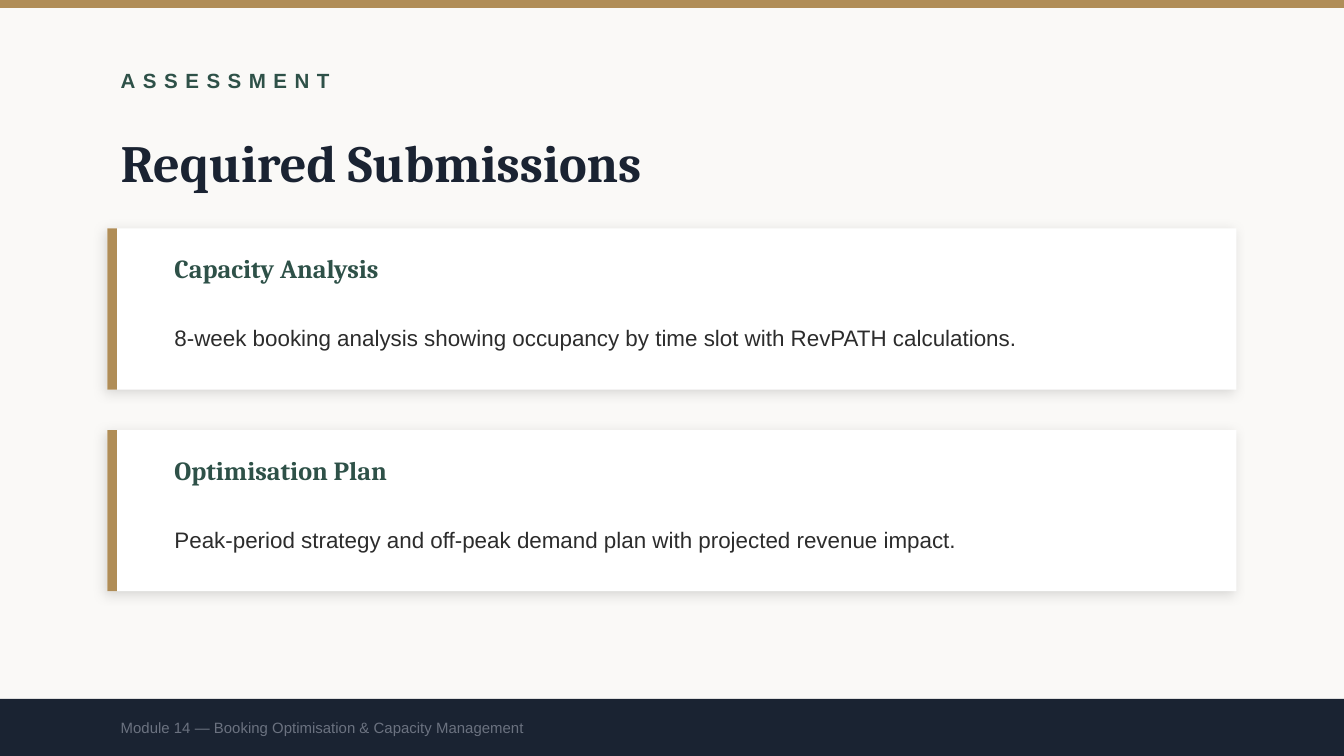
from lxml import etree
from pptx import Presentation
from pptx.dml.color import RGBColor
from pptx.enum.shapes import MSO_SHAPE
from pptx.enum.text import MSO_ANCHOR
from pptx.oxml.ns import qn
from pptx.util import Inches, Pt

RECTANGLE = MSO_SHAPE.RECTANGLE
MIDDLE = MSO_ANCHOR.MIDDLE

GRID = Inches(0.1)
COLUMNS, ROWS = 100, 56.25
MARGIN = 8
TEXT_WIDTH = 80
CARD_TOP, CARD_WIDTH, CARD_HEIGHT, CARD_STEP = 17, 84, 12, 15

GOLD, GREEN, NAVY = "B08D57", "2E5148", "1A2332"
PAPER, WHITE, BLACK = "FAF9F7", "FFFFFF", "000000"
INK, GRAY = "2C2C2C", "6B7280"
HEADING_FONT, BODY_FONT = "Cambria", "Arial"

CARDS = [
    ("Capacity Analysis",
     "8-week booking analysis showing occupancy by time slot with RevPATH calculations."),
    ("Optimisation Plan",
     "Peak-period strategy and off-peak demand plan with projected revenue impact."),
]


def color(value):
    return RGBColor.from_string(value)


def on_grid(box):
    return [round(length * GRID) for length in box]


def add_rectangle(slide, box, fill):
    shape = slide.shapes.add_shape(RECTANGLE, *on_grid(box))
    shape.fill.solid()
    shape.fill.fore_color.rgb = color(fill)
    shape.line.fill.background()
    shape.shadow.inherit = False
    return shape


def add_soft_shadow(shape):
    effects = shape._element.spPr.find(qn("a:effectLst"))
    shadow = etree.SubElement(
        effects, qn("a:outerShdw"), blurRad=str(Pt(6)), dist=str(Pt(2)),
        dir=str(135 * 60000), algn="bl", rotWithShape="0")
    tint = etree.SubElement(shadow, qn("a:srgbClr"), val=BLACK)
    etree.SubElement(tint, qn("a:alpha"), val="12000")


def add_text(slide, box, text, font_name, size, fill, bold=False, tracking=0, line_spacing=None):
    text_frame = slide.shapes.add_textbox(*on_grid(box)).text_frame
    text_frame.word_wrap = True
    text_frame.vertical_anchor = MIDDLE
    text_frame.text = text
    paragraph = text_frame.paragraphs[0]
    if line_spacing:
        paragraph.line_spacing = line_spacing
    run = paragraph.runs[0]
    run.font.name = font_name
    run.font.size = Pt(size)
    run.font.bold = bold
    run.font.color.rgb = color(fill)
    if tracking:
        run._r.get_or_add_rPr().set("spc", str(tracking * 100))


def add_header(slide, box):
    left, top, width, height = box
    add_text(slide, (left, top, width, 4), "ASSESSMENT", BODY_FONT, 11, GREEN,
             bold=True, tracking=4)
    add_text(slide, (left, top + 5, width, height - 5), "Required Submissions",
             HEADING_FONT, 28, NAVY, bold=True)


def add_card(slide, box, heading, description):
    left, top, width, height = box
    add_soft_shadow(add_rectangle(slide, box, WHITE))
    add_rectangle(slide, (left, top, 0.7, height), GOLD)
    text_left, text_width = left + 4, width - 7
    add_text(slide, (text_left, top + 1.2, text_width, 3.5), heading,
             HEADING_FONT, 14, GREEN, bold=True)
    add_text(slide, (text_left, top + 5, text_width, 5.5), description,
             BODY_FONT, 12, INK, line_spacing=1.4)


def add_footer(slide, box):
    left, top, width, height = box
    add_rectangle(slide, box, NAVY)
    add_text(slide, (left + MARGIN, top, TEXT_WIDTH, height),
             "Module 14 — Booking Optimisation & Capacity Management",
             BODY_FONT, 8, GRAY)


def main():
    presentation = Presentation()
    presentation.slide_width, presentation.slide_height = on_grid((COLUMNS, ROWS))
    slide = presentation.slides.add_slide(presentation.slide_layouts[6])
    slide.background.fill.solid()
    slide.background.fill.fore_color.rgb = color(PAPER)

    add_rectangle(slide, (0, 0, COLUMNS, 0.6), GOLD)
    add_header(slide, (MARGIN, 4, TEXT_WIDTH, 11))
    for index, (heading, description) in enumerate(CARDS):
        card_box = (MARGIN, CARD_TOP + index * CARD_STEP, CARD_WIDTH, CARD_HEIGHT)
        add_card(slide, card_box, heading, description)
    add_footer(slide, (0, 52, COLUMNS, ROWS - 52))
    presentation.save("out.pptx")


if __name__ == "__main__":
    main()
